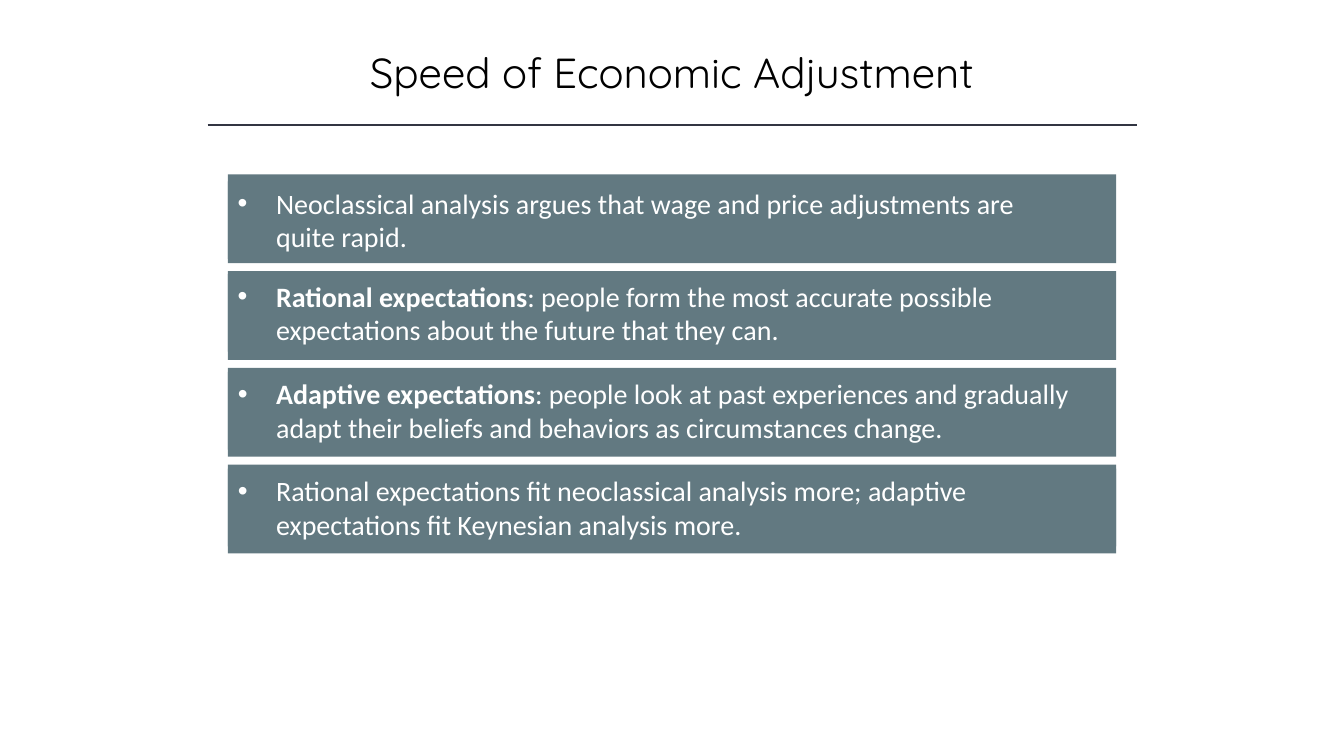
from lxml import etree
from pptx import Presentation
from pptx.dml.color import RGBColor
from pptx.enum import shapes, text
from pptx.oxml import ns
from pptx.util import Inches, Pt

BAR_LEFT, BAR_TOP, BAR_WIDTH, BAR_HEIGHT = 2.26, 1.73, 8.81, 0.88
BAR_PITCH = 0.96
TEXT_HEIGHT = 0.77

# Each point: text offset below the bar's top, text width, (wording, bold) runs
POINTS = [
    (0.07, 8.54, [("Neoclassical analysis argues that wage and price adjustments "
                   "are quite rapid.", False)]),
    (0.03, 8.76, [("Rational expectations", True),
                  (": people form the most accurate possible expectations "
                   "about the future that they can.", False)]),
    (0.04, 8.78, [("Adaptive expectations", True),
                  (": people look at past experiences and gradually adapt their "
                   "beliefs and behaviors as circumstances change.", False)]),
    (0.04, 8.81, [("Rational expectations fit neoclassical analysis more; "
                   "adaptive expectations fit Keynesian analysis more.", False)]),
]


def color(value):
    return RGBColor.from_string(value)


class SlideBuilder:
    heading_font, body_font = "Quicksand", "Calibri"
    black, white, slate, rule_color = "000000", "FFFFFF", "627981", "323542"

    def __init__(self, slide):
        self.slide = slide

    def add_runs(self, box, runs, font, size, ink, align):
        """Fill the first paragraph of a box with (wording, bold) runs."""
        frame = box.text_frame
        frame.word_wrap = True
        frame.auto_size = text.MSO_AUTO_SIZE.SHAPE_TO_FIT_TEXT
        frame.vertical_anchor = text.MSO_ANCHOR.TOP
        para = frame.paragraphs[0]
        para.alignment = align
        for wording, bold in runs:
            span = para.add_run()
            span.text = wording
            span.font.name = font
            span.font.size = Pt(size)
            span.font.bold = bold
            span.font.color.rgb = color(ink)
        return para

    def title(self, wording, left, top, width, height):
        box = self.slide.shapes.add_textbox(
            Inches(left), Inches(top), Inches(width), Inches(height))
        self.add_runs(box, [(wording, False)], self.heading_font, 30,
                      self.black, text.PP_ALIGN.CENTER)

    def rule(self, left, right, top):
        line = self.slide.shapes.add_connector(
            shapes.MSO_CONNECTOR.STRAIGHT,
            Inches(left), Inches(top), Inches(right), Inches(top))
        line.line.color.rgb = color(self.rule_color)
        line.line.width = Pt(1)
        etree.SubElement(line._element.spPr, ns.qn("a:effectLst"))

    def panel(self, group, left, top, width, height):
        box = group.shapes.add_shape(
            shapes.MSO_SHAPE.RECTANGLE,
            Inches(left), Inches(top), Inches(width), Inches(height))
        box.shadow.inherit = False
        box.fill.solid()
        box.fill.fore_color.rgb = color(self.slate)
        box.line.fill.background()
        return box

    def bullet(self, para, indent):
        properties = para._p.get_or_add_pPr()
        properties.set("marL", str(Inches(indent)))
        properties.set("indent", str(-Inches(indent)))
        etree.SubElement(properties, ns.qn("a:buFont"), typeface="Arial")
        etree.SubElement(properties, ns.qn("a:buChar"), char="•")

    def point(self, top, offset, text_width, runs):
        """Draw a full-width bar with a bulleted text panel on it."""
        group = self.slide.shapes.add_group_shape()
        self.panel(group, BAR_LEFT, top, BAR_WIDTH, BAR_HEIGHT)
        box = self.panel(group, BAR_LEFT, top + offset, text_width, TEXT_HEIGHT)
        para = self.add_runs(box, runs, self.body_font, 20,
                             self.white, text.PP_ALIGN.LEFT)
        self.bullet(para, 0.38)


def main():
    deck = Presentation()
    deck.slide_width, deck.slide_height = Inches(13.33), Inches(7.5)
    page = SlideBuilder(deck.slides.add_slide(deck.slide_layouts[6]))
    page.title("Speed of Economic Adjustment", 1.5, 0.41, 10.33, 0.61)
    page.rule(2.06, 11.28, 1.24)
    for row, (offset, text_width, runs) in enumerate(POINTS):
        page.point(BAR_TOP + row * BAR_PITCH, offset, text_width, runs)
    deck.save("out.pptx")


if __name__ == "__main__":
    main()
